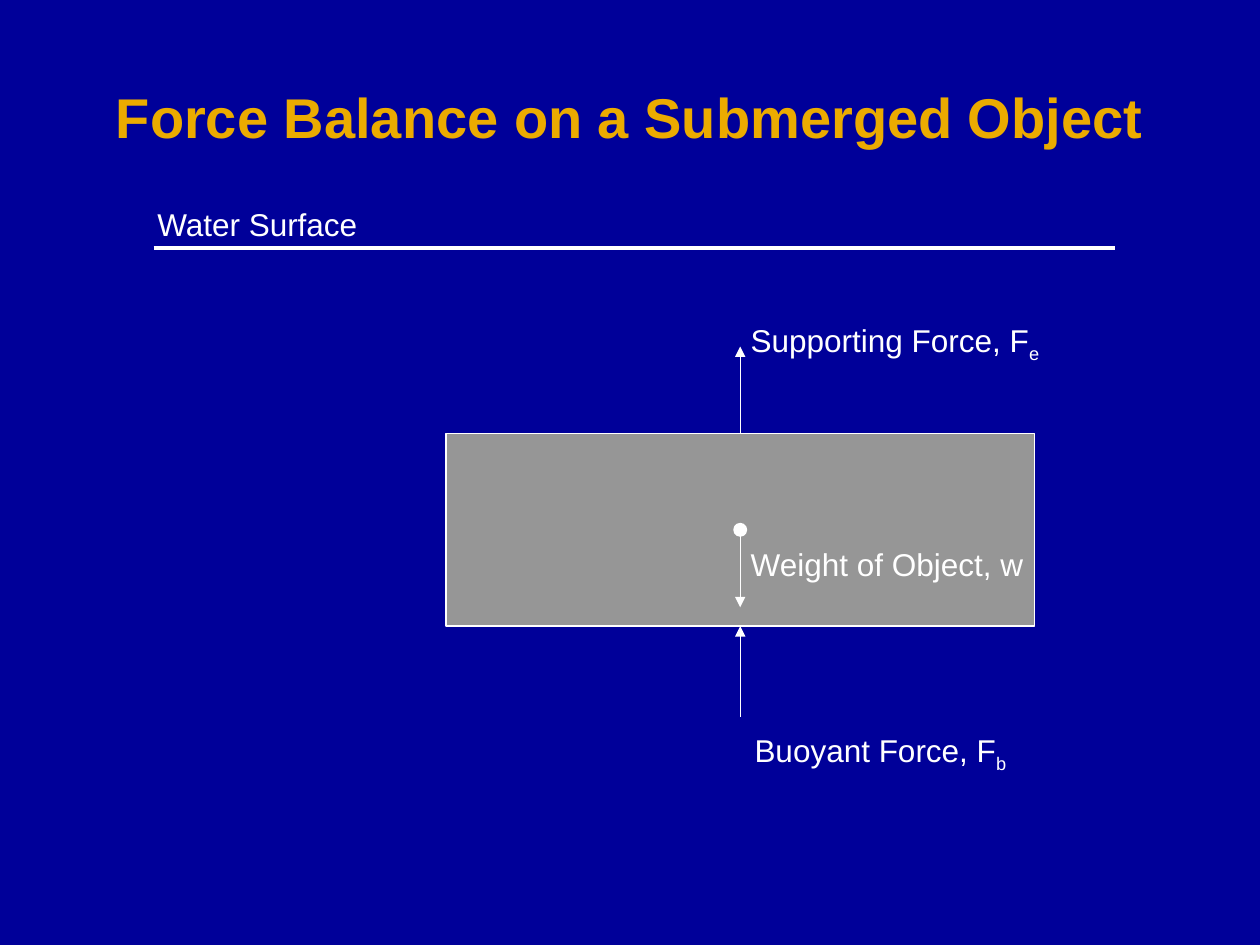
from lxml.etree import SubElement
from pptx import Presentation
from pptx.dml.color import RGBColor
from pptx.enum.shapes import MSO_CONNECTOR as Connector, MSO_SHAPE as Shape
from pptx.enum.text import MSO_ANCHOR as Anchor, MSO_AUTO_SIZE as AutoSize, PP_ALIGN as Align
from pptx.oxml.ns import qn
from pptx.util import Inches, Pt

NAVY = RGBColor(0x00, 0x00, 0x99)
GOLD = RGBColor(0xEB, 0xAB, 0x00)
GRAY = RGBColor(0x96, 0x96, 0x96)
WHITE = RGBColor(0xFF, 0xFF, 0xFF)
COLUMNS, ROWS = 100, 75
TOP, BOTTOM = 0, 2


class ForceDiagram:
    """Draws a force diagram on a grid of 100 columns by 75 rows."""

    font_name = "Arial"
    thin, thick = Pt(0.75), Pt(2)

    def __init__(self, deck):
        self.column = deck.slide_width / COLUMNS
        self.row = deck.slide_height / ROWS
        self.page = deck.slides.add_slide(deck.slide_layouts[5])
        self.page.background.fill.solid()
        self.page.background.fill.fore_color.rgb = NAVY

    def place(self, *grid):
        units = (self.column, self.row) * 2
        return [round(value * unit) for value, unit in zip(grid, units)]

    def style(self, span, size, color, bold=False):
        span.font.name = self.font_name
        span.font.size = Pt(size)
        span.font.color.rgb = color
        span.font.bold = bold

    def title(self, text, *grid):
        box = self.page.shapes.title
        box.left, box.top, box.width, box.height = self.place(*grid)
        box.text_frame.text = text
        box.text_frame.vertical_anchor = Anchor.MIDDLE
        para = box.text_frame.paragraphs[0]
        para.alignment = Align.CENTER
        self.style(para.runs[0], 32, GOLD, True)

    def shape(self, kind, fill, *grid):
        shape = self.page.shapes.add_shape(kind, *self.place(*grid))
        shape.shadow.inherit = False
        shape.fill.solid()
        shape.fill.fore_color.rgb = fill
        shape.line.color.rgb = WHITE
        shape.line.width = self.thin
        return shape

    def line(self, *grid, width=thin):
        line = self.page.shapes.add_connector(Connector.STRAIGHT, *self.place(*grid))
        line.line.color.rgb = WHITE
        line.line.width = width
        SubElement(line._element.spPr, qn("a:effectLst"))
        return line

    def arrow(self, column, start, end):
        arrow = self.line(column, start, column, end)
        SubElement(arrow.line._get_or_add_ln(), qn("a:tailEnd"), type="triangle")
        return arrow

    def label(self, column, row, text, subscript=""):
        box = self.page.shapes.add_textbox(*self.place(column, row, 27, 4))
        frame = box.text_frame
        frame.text = text
        frame.word_wrap = True
        frame.auto_size = AutoSize.SHAPE_TO_FIT_TEXT
        para = frame.paragraphs[0]
        if subscript:
            span = para.add_run()
            span.text = subscript
            span.font._element.set("baseline", "-25000")
        for span in para.runs:
            self.style(span, 18, WHITE)


def main():
    deck = Presentation()
    deck.slide_width, deck.slide_height = Inches(10), Inches(7.5)
    diagram = ForceDiagram(deck)
    left, top, width, height = 35.4, 34.4, 46.7, 15.3
    center, middle, dot = left + width / 2, top + height / 2, 1

    diagram.title("Force Balance on a Submerged Object", 5, 3, 90, 12.5)
    block = diagram.shape(Shape.RECTANGLE, GRAY, left, top, width, height)
    diagram.line(12.2, 19.7, 88.5, 19.7, width=diagram.thick)
    diagram.label(11.5, 15.8, "Water Surface")

    diagram.arrow(center, top, 27.5).begin_connect(block, TOP)
    diagram.arrow(center, 56.9, top + height).end_connect(block, BOTTOM)
    diagram.arrow(center, middle, 48.2)
    diagram.shape(Shape.OVAL, WHITE, center - dot / 2, middle - dot / 2, dot, dot)

    diagram.label(58.6, 25, "Supporting Force, F", "e")
    diagram.label(58.9, 57.5, "Buoyant Force, F", "b")
    diagram.label(58.6, 42.8, "Weight of Object, w")
    deck.save("out.pptx")


if __name__ == "__main__":
    main()
